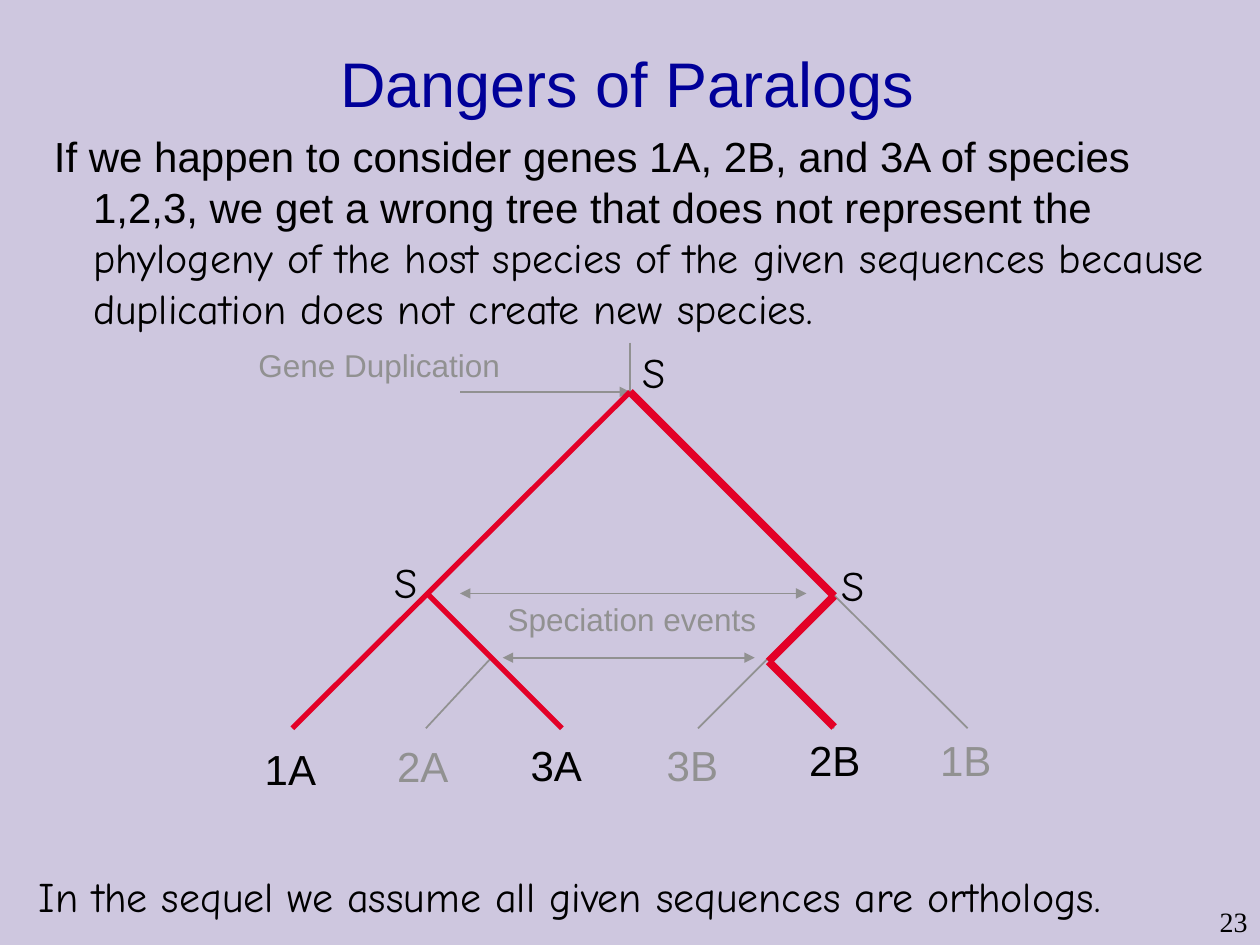
from dataclasses import dataclass
from typing import Any

from lxml import etree
from pptx import Presentation
from pptx.dml.color import RGBColor
from pptx.enum.shapes import MSO_CONNECTOR
from pptx.enum.text import MSO_ANCHOR, MSO_AUTO_SIZE, PP_ALIGN
from pptx.oxml.ns import qn
from pptx.util import Inches, Pt

STRAIGHT = MSO_CONNECTOR.STRAIGHT
TOP, MIDDLE = MSO_ANCHOR.TOP, MSO_ANCHOR.MIDDLE
LEFT, CENTER, RIGHT = PP_ALIGN.LEFT, PP_ALIGN.CENTER, PP_ALIGN.RIGHT
GROW, FIXED = MSO_AUTO_SIZE.SHAPE_TO_FIT_TEXT, MSO_AUTO_SIZE.NONE


def rgb(hex_color):
    return RGBColor.from_string(hex_color)


def write(paragraph, text, *, font="Arial", size=24, color="000000"):
    run = paragraph.add_run()
    run.text = text
    run.font.name = font
    run.font.size = Pt(size)
    run.font.color.rgb = rgb(color)


@dataclass
class TreeSlide:
    slide: Any
    background: str = "CEC7DF"
    title_color: str = "000099"
    ink: str = "000000"
    muted: str = "919191"
    accent: str = "E30127"
    script_font: str = "Comic Neue"

    def paint_background(self):
        fill = self.slide.background.fill
        fill.solid()
        fill.fore_color.rgb = rgb(self.background)

    def text(self, box, *runs, align=LEFT, anchor=TOP, wrap=False, **style):
        area = self.slide.shapes.add_textbox(*map(Inches, box))
        frame = area.text_frame
        frame.word_wrap = wrap
        frame.auto_size = FIXED if wrap else GROW
        frame.vertical_anchor = anchor
        paragraph = frame.paragraphs[0]
        paragraph.alignment = align
        for content, font in runs:
            write(paragraph, content, font=font, **style)
        return paragraph

    def line(self, start, end, color, width=1, head=False, tail=False):
        ends = map(Inches, (*start, *end))
        branch = self.slide.shapes.add_connector(STRAIGHT, *ends)
        branch.line.color.rgb = rgb(color)
        branch.line.width = Pt(width)
        outline = branch.line._get_or_add_ln()
        for tag, shown in (("a:headEnd", head), ("a:tailEnd", tail)):
            if shown:
                etree.SubElement(outline, qn(tag), type="triangle")
        etree.SubElement(branch._element.spPr, qn("a:effectLst"))

    def path_of_lines(self, points, color, width):
        for start, end in zip(points, points[1:]):
            self.line(start, end, color, width)


def main():
    prs = Presentation()
    prs.slide_width, prs.slide_height = Inches(10), Inches(7.5)
    page = TreeSlide(prs.slides.add_slide(prs.slide_layouts[6]))
    page.paint_background()

    page.text((9.54, 7.13, 0.46, 0.37), ("23", "Times New Roman"),
              align=RIGHT, anchor=MIDDLE, size=16)
    page.text((0.38, 0.03, 9.2, 1.25), ("Dangers of Paralogs", "Arial"),
              align=CENTER, anchor=MIDDLE, wrap=True, size=36, color=page.title_color)

    root = (5, 3.11)
    leaf_y = 5.78
    page.line((5, 2.72), root, page.muted)
    for side in (-1, 1):
        outer_leaf = (5 + side * 2.68, leaf_y)
        speciation = (5 + side * 1.61, 4.71)
        inner_leaf = (5 + side * 0.54, leaf_y)
        inner_split = (5 + side * 1.1, 5.22)
        middle_leaf = (5 + side * 1.62, leaf_y)
        for start, end in ((root, outer_leaf), (speciation, inner_leaf),
                           (inner_split, middle_leaf)):
            page.line(start, end, page.muted)

    for y, left, right in ((4.71, 3.65, 6.4), (5.22, 3.99, 5.99)):
        page.line((left, y), (right, y), page.muted, head=True, tail=True)
    page.line(root, (3.65, 3.11), page.muted, head=True)

    for event, box in (("Speciation events", (3.93, 4.71, 2.17, 0.4)),
                       ("Gene Duplication", (1.95, 2.7, 2.12, 0.4))):
        page.text(box, (event, "Arial"), align=CENTER, anchor=MIDDLE,
                  size=18, color=page.muted)

    genes = (("1A", 2, 5.85), ("2A", 3.05, 5.83), ("3A", 4.11, 5.82),
             ("3B", 5.19, 5.82), ("2B", 6.32, 5.78), ("1B", 7.36, 5.78))
    considered = ("1A", "2B", "3A")
    for gene, x, y in genes:
        page.text((x, y, 0.61, 0.5), (gene, "Arial"), align=CENTER, anchor=MIDDLE,
                  color=page.ink if gene in considered else page.muted)

    explanation = page.text(
        (0.33, 0.99, 9.45, 5.59),
        ("If we happen to consider genes 1A, 2B, and 3A of species 1,2,3, "
         "we get a wrong tree that does not represent the ", "Arial"),
        ("phylogeny of the host species of the given sequences because "
         "duplication does not create new species.", page.script_font),
        wrap=True)
    explanation.space_before = Pt(4.8)
    indent = explanation._p.get_or_add_pPr()
    indent.set("marL", str(Inches(0.31)))
    indent.set("indent", str(Inches(-0.31)))

    page.path_of_lines(((2.32, leaf_y), root), page.accent, 3)
    page.path_of_lines(((4.46, leaf_y), (3.39, 4.71)), page.accent, 3)
    page.path_of_lines((root, (6.62, 4.73), (6.1, 5.25), (6.62, 5.77)),
                       page.accent, 4.5)

    page.text((0.21, 6.86, 9.23, 0.5),
              ("In the sequel we assume all given sequences are orthologs.",
               page.script_font))
    for x, y in ((5, 2.7), (6.58, 4.39), (3.03, 4.37)):
        page.text((x, y, 0.43, 0.5), ("S", page.script_font))

    prs.save("out.pptx")


if __name__ == "__main__":
    main()
